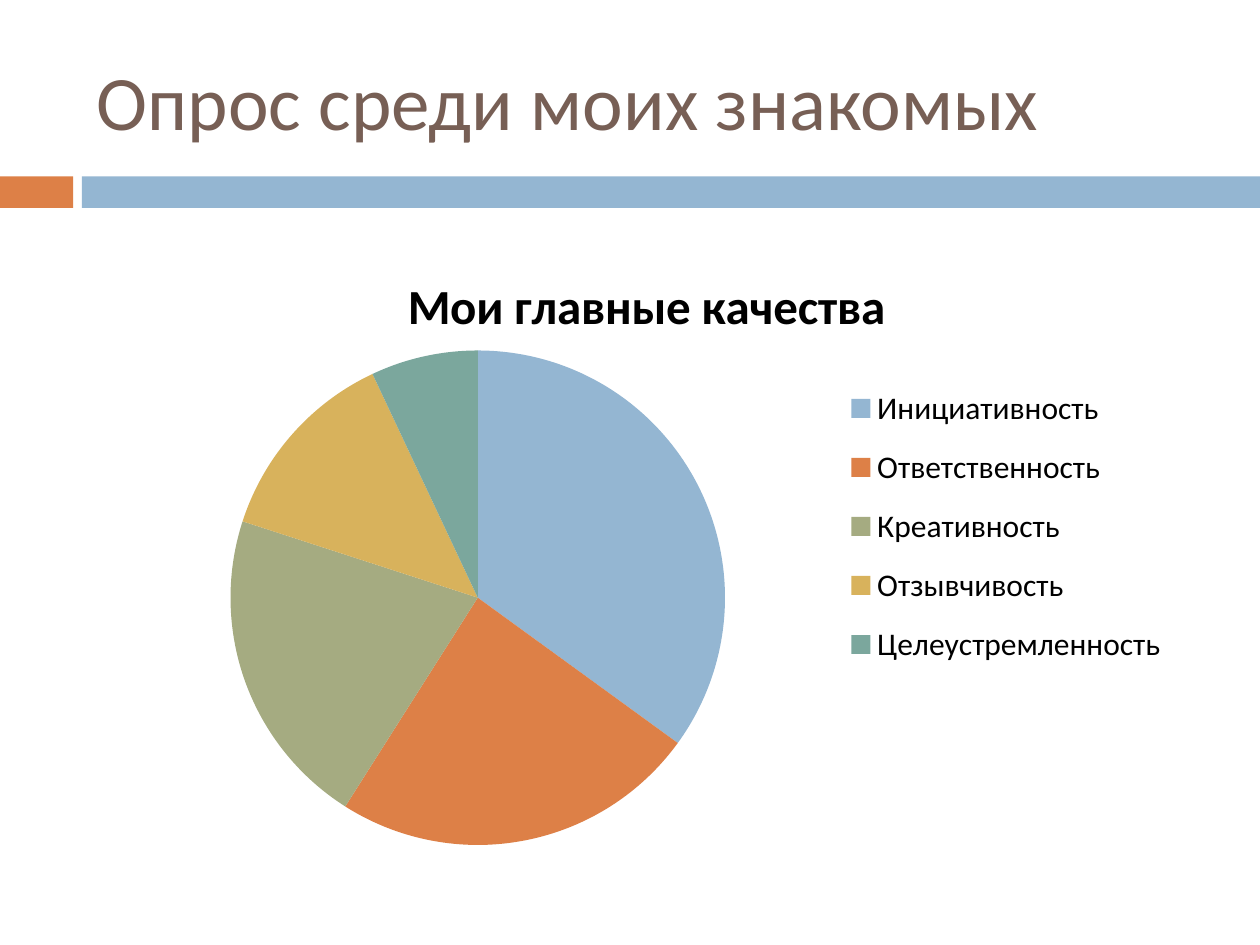
from dataclasses import dataclass

from lxml.etree import SubElement
from pptx import Presentation
from pptx.chart.data import CategoryChartData
from pptx.dml.color import RGBColor
from pptx.enum.chart import XL_CHART_TYPE, XL_LEGEND_POSITION
from pptx.enum.shapes import MSO_SHAPE
from pptx.enum.text import MSO_ANCHOR
from pptx.oxml.ns import qn
from pptx.util import Inches, Pt

FONT = "Calibri"
BLUE = RGBColor(0x94, 0xB6, 0xD2)
ORANGE = RGBColor(0xDD, 0x80, 0x47)
GREEN = RGBColor(0xA5, 0xAB, 0x81)
GOLD = RGBColor(0xD8, 0xB2, 0x5C)
TEAL = RGBColor(0x7B, 0xA7, 0x9D)
BROWN = RGBColor(0x77, 0x5F, 0x55)
BLACK = RGBColor(0, 0, 0)


@dataclass
class Bar:
    left: float
    width: float
    color: RGBColor


@dataclass
class Slice:
    label: str
    value: int
    color: RGBColor


BARS = [Bar(0, 0.58, ORANGE), Bar(0.65, 9.35, BLUE)]
SLICES = [
    Slice("Инициативность", 35, BLUE),
    Slice("Ответственность", 24, ORANGE),
    Slice("Креативность", 21, GREEN),
    Slice("Отзывчивость", 13, GOLD),
    Slice("Целеустремленность", 7, TEAL),
]


def draw_bar(slide, bar: Bar) -> None:
    shape = slide.shapes.add_shape(
        MSO_SHAPE.RECTANGLE,
        Inches(bar.left), Inches(1.4), Inches(bar.width), Inches(0.25),
    )
    shape.shadow.inherit = False
    shape.fill.solid()
    shape.fill.fore_color.rgb = bar.color
    shape.line.fill.background()


def set_font(font, size: int, color: RGBColor, bold: bool = False) -> None:
    font.name = FONT
    font.size = Pt(size)
    font.color.rgb = color
    font.bold = bold


def draw_title(slide, text: str) -> None:
    box = slide.shapes.add_textbox(
        Inches(0.67), Inches(0.25), Inches(8.92), Inches(1.08)
    )
    frame = box.text_frame
    frame.text = text
    frame.word_wrap = True
    frame.vertical_anchor = MSO_ANCHOR.MIDDLE
    set_font(frame.paragraphs[0].runs[0].font, 44, BROWN)


def set_layout(part, index: int, inner: bool, **place: float) -> None:
    """Place a chart part by fractions of the chart's size."""
    for old in part.findall(qn("c:layout")):
        part.remove(old)
    layout = SubElement(part, qn("c:layout"))
    part.insert(index, layout)
    manual = SubElement(layout, qn("c:manualLayout"))
    if inner:
        SubElement(manual, qn("c:layoutTarget")).set("val", "inner")
    for axis in "xy":
        SubElement(manual, qn(f"c:{axis}Mode")).set("val", "edge")
    for key, value in place.items():
        SubElement(manual, qn(f"c:{key}")).set("val", str(value))


def draw_pie(slide, title: str, slices: list[Slice]) -> None:
    data = CategoryChartData()
    data.categories = [part.label for part in slices]
    data.add_series("Series 1", [part.value for part in slices])
    chart = slide.shapes.add_chart(
        XL_CHART_TYPE.PIE,
        Inches(0.67), Inches(1.94), Inches(8.92), Inches(4.92), data,
    ).chart
    set_font(chart.font, 18, BLACK)

    chart.has_title = True
    frame = chart.chart_title.text_frame
    frame.text = title
    set_font(frame.paragraphs[0].runs[0].font, 28, BLACK, bold=True)
    chart.chart_title.include_in_layout = False

    chart.has_legend = True
    legend = chart.legend
    legend.position = XL_LEGEND_POSITION.RIGHT
    legend.include_in_layout = False
    set_font(legend.font, 18, BLACK)

    plot = chart.plots[0]
    plot.vary_by_categories = True
    for index, part in enumerate(slices):
        fill = plot.series[0].points[index].format.fill
        fill.solid()
        fill.fore_color.rgb = part.color

    area = chart.element.find(f".//{qn('c:plotArea')}")
    set_layout(area, 0, True, x=0.13, y=0.17, w=0.44, h=0.8)
    key = chart.element.find(f".//{qn('c:legend')}")
    set_layout(key, 1, False, x=0.67, y=0.2, w=0.3, h=0.51)


def main() -> None:
    deck = Presentation()
    deck.slide_width, deck.slide_height = Inches(10), Inches(7.5)
    slide = deck.slides.add_slide(deck.slide_layouts[6])
    for bar in BARS:
        draw_bar(slide, bar)
    draw_title(slide, "Опрос среди моих знакомых")
    draw_pie(slide, "Мои главные качества", SLICES)
    deck.save("out.pptx")


if __name__ == "__main__":
    main()
